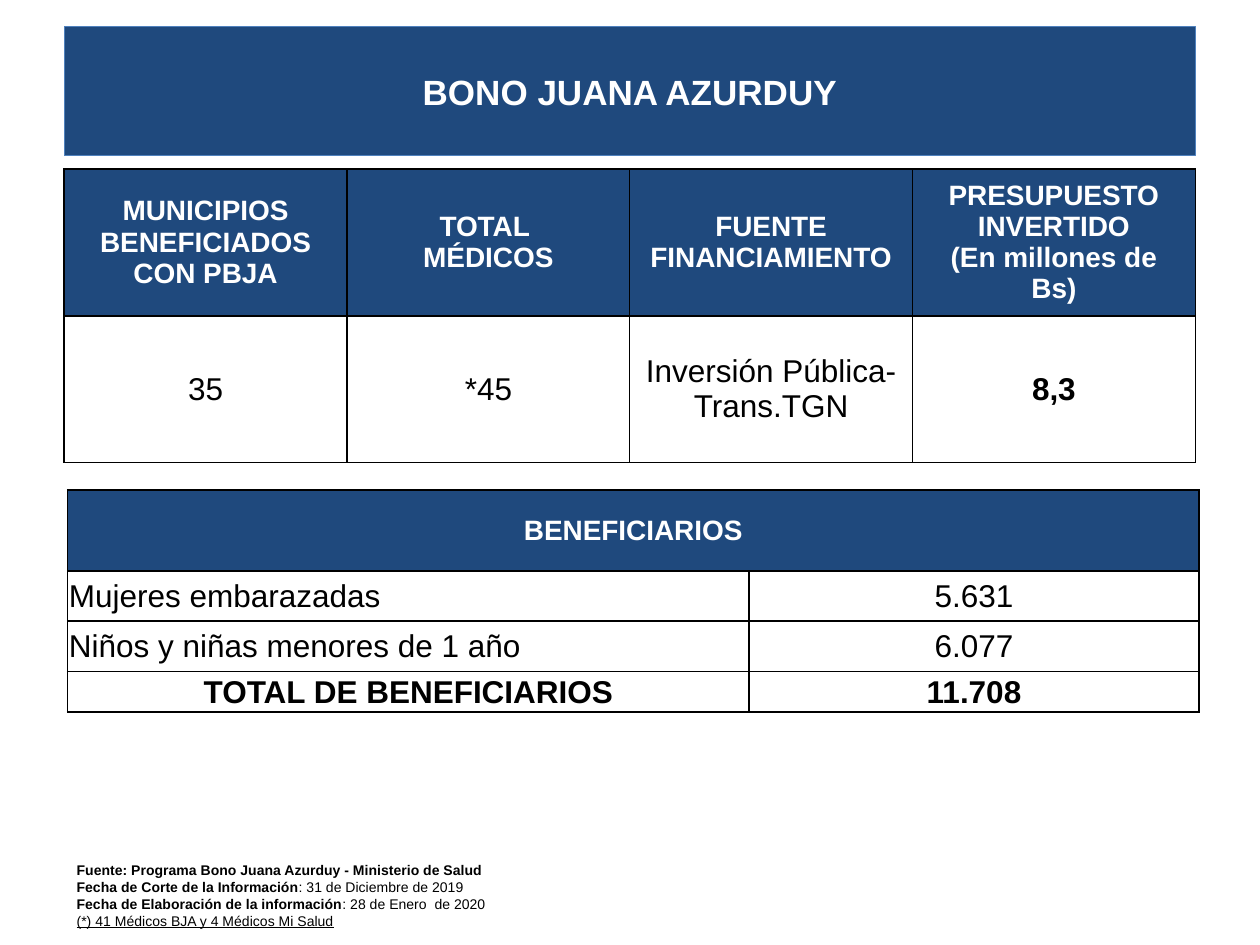
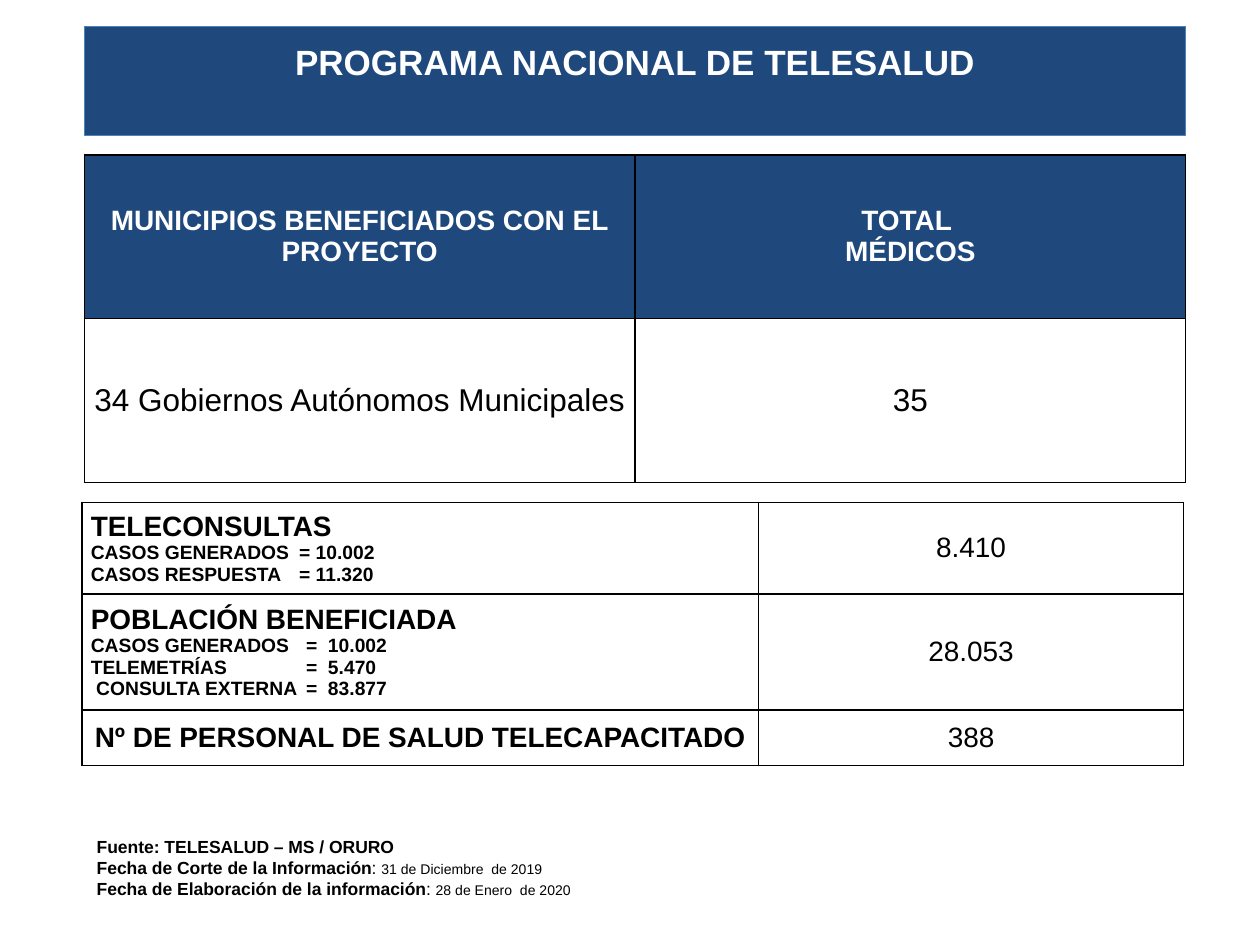
from dataclasses import dataclass

from lxml import etree
from pptx import Presentation
from pptx.dml.color import RGBColor
from pptx.enum.text import MSO_ANCHOR, MSO_AUTO_SIZE, PP_ALIGN
from pptx.oxml.ns import qn
from pptx.util import Pt

LEFT, CENTER = PP_ALIGN.LEFT, PP_ALIGN.CENTER
TOP, MIDDLE = MSO_ANCHOR.TOP, MSO_ANCHOR.MIDDLE
NO_AUTOFIT = MSO_AUTO_SIZE.NONE

NAVY = RGBColor(0x1F, 0x49, 0x7D)
BLUE = RGBColor(0x4F, 0x81, 0xBD)
WHITE = RGBColor(0xFF, 0xFF, 0xFF)
BLACK = RGBColor(0x00, 0x00, 0x00)

FONT = "Arial"
TITLE_ONLY = 5
TITLE = {"size": Pt(20), "bold": True, "color": WHITE}
HEADING = {"size": Pt(16), "bold": True, "color": WHITE}
BODY = {"size": Pt(18), "bold": False, "color": BLACK}
TOTAL = {**BODY, "bold": True}
LABEL = {"size": Pt(16), "bold": True, "color": BLACK}
DETAIL = {**LABEL, "size": Pt(11)}
FIGURE = {**LABEL, "bold": False}
SOURCE_BOLD = {"size": Pt(10), "bold": True, "color": BLACK}
SOURCE = {**SOURCE_BOLD, "bold": False}
SMALL_BOLD = {**SOURCE_BOLD, "size": Pt(8)}
SMALL = {**SMALL_BOLD, "bold": False}

WIDE_MARGINS = (7.2, 3.6, 7.2, 3.6)
NARROW_MARGINS = (5, 3.6, 5, 3.6)
TIGHT_MARGINS = (0.7, 0.7, 0.7, 0)


@dataclass
class Cell:
    """Content and look of one table cell."""

    paragraphs: list
    align: PP_ALIGN = CENTER
    fill: RGBColor = None
    tab: float = None


def lines(style, *texts):
    """Return one single-run paragraph for each text."""
    return [[(text, style)] for text in texts]


def heading(*texts):
    """Return a navy heading cell."""
    return Cell(lines(HEADING, *texts), fill=NAVY)


def value(text, style=BODY, align=CENTER):
    """Return a white cell with one line of text."""
    return Cell(lines(style, text), align, WHITE)


def detail(title, tab, *texts):
    """Return a left-aligned cell with a title and its breakdown."""
    return Cell(lines(LABEL, title) + lines(DETAIL, *texts), LEFT, tab=tab)


def set_margins(target, margins):
    """Set the left, top, right and bottom margins of a frame or cell."""
    for side, margin in zip(("left", "top", "right", "bottom"), margins):
        setattr(target, f"margin_{side}", Pt(margin))


def write_text(frame, paragraphs, align=LEFT, tab=None):
    """Fill a text frame with paragraphs of formatted runs."""
    for index, runs in enumerate(paragraphs):
        paragraph = frame.add_paragraph() if index else frame.paragraphs[0]
        paragraph.alignment = align
        if tab:
            tabs = etree.SubElement(paragraph._p.get_or_add_pPr(), qn("a:tabLst"))
            etree.SubElement(tabs, qn("a:tab"), pos=str(int(Pt(tab))), algn="l")
        for text, style in runs:
            run = paragraph.add_run()
            run.text = text
            run.font.name = FONT
            for name, setting in style.items():
                if name == "color":
                    run.font.color.rgb = setting
                else:
                    setattr(run.font, name, setting)


def add_band(slide, box, text, anchor=MIDDLE):
    """Turn the title placeholder into the navy title band."""
    band = slide.shapes.title
    band.left, band.top, band.width, band.height = map(Pt, box)
    band.fill.solid()
    band.fill.fore_color.rgb = NAVY
    band.line.color.rgb = BLUE
    band.line.width = Pt(0.75)
    frame = band.text_frame
    frame.auto_size = NO_AUTOFIT
    frame.word_wrap = True
    frame.vertical_anchor = anchor
    set_margins(frame, (7.2, 8, 7.2, 8))
    write_text(frame, lines(TITLE, text), CENTER)


def add_borders(cell):
    """Draw a thin black line on each side of a cell."""
    properties = cell._tc.get_or_add_tcPr()
    for side in ("lnL", "lnR", "lnT", "lnB"):
        line = etree.SubElement(properties, qn(f"a:{side}"), w=str(int(Pt(1))))
        fill = etree.SubElement(line, qn("a:solidFill"))
        etree.SubElement(fill, qn("a:srgbClr"), val=str(BLACK))


def add_grid(slide, origin, widths, heights, rows, margins):
    """Add a bordered table at the origin; a short row is merged across."""
    size = (sum(widths), sum(heights))
    table = slide.shapes.add_table(
        len(heights), len(widths), *map(Pt, (*origin, *size))
    ).table
    table.first_row = table.horz_banding = False
    for column, width in zip(table.columns, widths):
        column.width = Pt(width)
    for row, height in zip(table.rows, heights):
        row.height = Pt(height)
    for cell in table.iter_cells():
        add_borders(cell)
    for row_index, contents in enumerate(rows):
        if len(contents) < len(widths):
            last = table.cell(row_index, len(widths) - 1)
            table.cell(row_index, len(contents) - 1).merge(last)
        for column_index, content in enumerate(contents):
            cell = table.cell(row_index, column_index)
            cell.vertical_anchor = MIDDLE
            set_margins(cell, margins)
            if content.fill is None:
                cell.fill.background()
            else:
                cell.fill.solid()
                cell.fill.fore_color.rgb = content.fill
            write_text(cell.text_frame, content.paragraphs, content.align, content.tab)


def add_source(slide, box, paragraphs):
    """Add the source and dates at the foot of the slide."""
    frame = slide.shapes.add_textbox(*map(Pt, box)).text_frame
    frame.word_wrap = True
    write_text(frame, paragraphs)


def build_bonus_slide(presentation):
    """Build the slide on the maternity bonus."""
    slide = presentation.slides.add_slide(presentation.slide_layouts[TITLE_ONLY])
    left, width = 36.7, 646.4
    add_band(slide, (left, 15, width, 74), "BONO JUANA AZURDUY")
    add_grid(slide, (left + 2, 280), (389.4, 257), (46.3, 28.7, 28.7, 23.2), [
        [heading("BENEFICIARIOS")],
        [value("Mujeres embarazadas", align=LEFT), value("5.631")],
        [value("Niños y niñas menores de 1 año", align=LEFT), value("6.077")],
        [value("TOTAL DE BENEFICIARIOS", TOTAL), value("11.708", TOTAL)],
    ], TIGHT_MARGINS)
    add_source(slide, (left, 489, 254, 55), [
        *lines(SMALL_BOLD, "Fuente: Programa Bono Juana Azurduy - Ministerio de Salud"),
        [("Fecha de Corte de la Información", SMALL_BOLD),
         (": 31 de Diciembre de 2019", SMALL)],
        [("Fecha de Elaboración de la información", SMALL_BOLD),
         (": 28 de Enero  de 2020", SMALL)],
        *lines({**SMALL, "underline": True}, "(*) 41 Médicos BJA y 4 Médicos Mi Salud"),
    ])
    add_grid(slide, (left, 96.5), [width / 4] * 4, [83.8] * 2, [
        [heading("MUNICIPIOS BENEFICIADOS CON PBJA"),
         heading("TOTAL ", "MÉDICOS"),
         heading("FUENTE FINANCIAMIENTO"),
         heading("PRESUPUESTO INVERTIDO", "(En millones de Bs)")],
        [value("35"), value("*45"), value("Inversión Pública- Trans.TGN"),
         value("8,3", TOTAL)],
    ], WIDE_MARGINS)


def build_telehealth_slide(presentation):
    """Build the slide on the telehealth programme."""
    slide = presentation.slides.add_slide(presentation.slide_layouts[TITLE_ONLY])
    left, width = 48.2, 629.4
    add_band(slide, (left, 15, width, 62.5), "PROGRAMA NACIONAL DE TELESALUD", TOP)
    add_grid(slide, (left, 88.5), [width / 2] * 2, [93.6] * 2, [
        [heading("MUNICIPIOS BENEFICIADOS CON EL PROYECTO"),
         heading("TOTAL ", "MÉDICOS")],
        [value("34 Gobiernos Autónomos Municipales"), value("35")],
    ], NARROW_MARGINS)
    add_grid(slide, (left - 1.3, 287), (386.6, 242.8), (52.5, 66.3, 31.8), [
        [detail("TELECONSULTAS", 119,
                "CASOS GENERADOS\t= 10.002", "CASOS RESPUESTA\t= 11.320"),
         Cell(lines(FIGURE, "8.410"))],
        [detail("POBLACIÓN BENEFICIADA", 123, "CASOS GENERADOS\t=  10.002",
                "TELEMETRÍAS\t=  5.470", " CONSULTA EXTERNA\t=  83.877"),
         Cell(lines(FIGURE, "28.053"))],
        [Cell(lines(LABEL, "Nº DE PERSONAL DE SALUD TELECAPACITADO")),
         Cell(lines(FIGURE, "388"))],
    ], NARROW_MARGINS)
    add_source(slide, (left, 474, 484, 44), [
        *lines(SOURCE_BOLD, "Fuente: TELESALUD – MS / ORURO"),
        [("Fecha de Corte de la Información", SOURCE_BOLD), (": ", SOURCE),
         ("31 de Diciembre  de 2019", SMALL)],
        [("Fecha de Elaboración de la información", SOURCE_BOLD), (": ", SOURCE),
         ("28 de Enero  de 2020", SMALL)],
    ])


def main():
    """Build both slides and save the presentation."""
    presentation = Presentation()
    presentation.slide_width, presentation.slide_height = Pt(720), Pt(540)
    build_bonus_slide(presentation)
    build_telehealth_slide(presentation)
    presentation.save("out.pptx")


if __name__ == "__main__":
    main()
